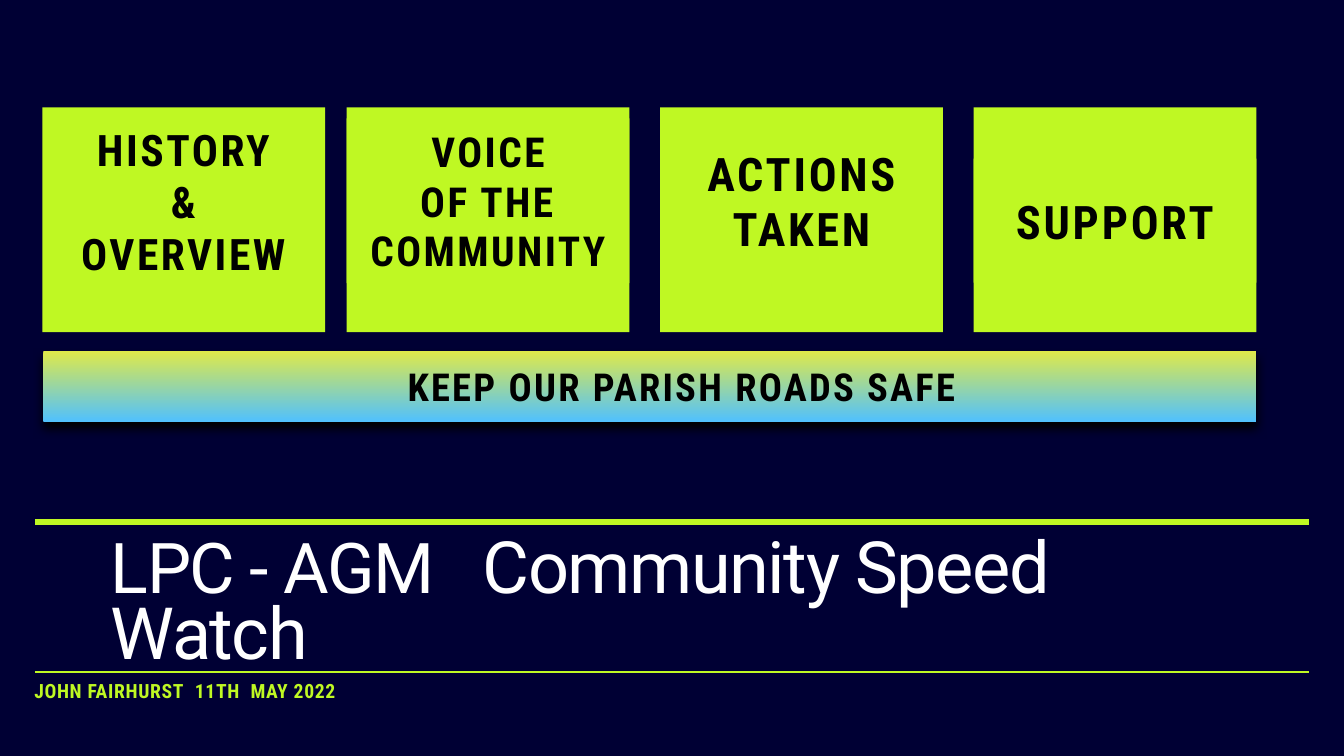
from typing import NamedTuple

from lxml import etree
from pptx import Presentation
from pptx import util as u
from pptx.dml import color
from pptx.enum import shapes, text
from pptx.oxml import ns

PX = 9144  # EMU per px, 100 px to the inch
NAVY, LIME, BLACK, WHITE = "000034", "BFF823", "000000", "FFFFFF"
CONDENSED, REGULAR = "Roboto Condensed", "Roboto"
CARD_TOP, CARD_WIDTH, CARD_HEIGHT = 213, 561, 446


class Box(NamedTuple):
    left: int
    top: int
    width: int
    height: int


class Style(NamedTuple):
    size: float
    tracking: float
    colour: str = BLACK
    font: str = CONDENSED
    bold: bool = True


class Card(NamedTuple):
    left: int
    label: Box
    lines: list[str]
    style: Style


CARDS = [
    Card(84, Box(90, 227, 548, 344), ["HISTORY", "&", "OVERVIEW"], Style(62, 3.7)),
    Card(688, Box(688, 235, 561, 327), ["VOICE", "OF THE COMMUNITY"], Style(59, 3.5)),
    Card(1310, Box(1315, 275, 551, 246), ["ACTIONS", "TAKEN"], Style(66, 4)),
    Card(1932, Box(1932, 315, 561, 246), ["SUPPORT"], Style(66, 4)),
]


def rgb(value: str) -> color.RGBColor:
    return color.RGBColor.from_string(value)


def emu(box: Box) -> list[int]:
    return [length * PX for length in box]


def style_run(run, style: Style) -> None:
    run.font.size = u.Pt(style.size)
    run.font.name = style.font
    run.font.bold = style.bold
    run.font.color.rgb = rgb(style.colour)
    run.font._element.set("spc", str(round(style.tracking * 100)))


def set_up_frame(frame, anchor=text.MSO_ANCHOR.MIDDLE) -> None:
    frame.word_wrap = True
    frame.auto_size = text.MSO_AUTO_SIZE.NONE
    frame.vertical_anchor = anchor
    frame.margin_left = frame.margin_right = 6 * PX
    frame.margin_top = frame.margin_bottom = 6 * PX


def write_lines(frame, lines: list[str], style: Style) -> None:
    set_up_frame(frame)
    frame.text = "\n".join(lines)
    for paragraph in frame.paragraphs:
        paragraph.alignment = text.PP_ALIGN.CENTER
        for run in paragraph.runs:
            style_run(run, style)


def write_runs(paragraph, pieces: list[tuple[str, Style]]) -> None:
    for words, style in pieces:
        run = paragraph.add_run()
        run.text = words
        style_run(run, style)


def add_panel(slide, box: Box):
    panel = slide.shapes.add_shape(shapes.MSO_SHAPE.RECTANGLE, *emu(box))
    panel.shadow.inherit = False
    panel.fill.solid()
    panel.fill.fore_color.rgb = rgb(LIME)
    panel.line.fill.background()
    return panel


def add_rule(slide, y: int, weight: float) -> None:
    rule = slide.shapes.add_connector(
        shapes.MSO_CONNECTOR.STRAIGHT, 69 * PX, y * PX, 2597 * PX, y * PX)
    rule.line.color.rgb = rgb(LIME)
    rule.line.width = u.Pt(weight)
    etree.SubElement(rule._element.spPr, ns.qn("a:effectLst"))


def add_card(slide, card: Card) -> None:
    add_panel(slide, Box(card.left, CARD_TOP, CARD_WIDTH, CARD_HEIGHT))
    label = add_panel(slide, card.label)
    write_lines(label.text_frame, card.lines, card.style)


def add_shadow(shape) -> None:
    """Cast a soft black shadow straight down."""
    effects = shape._element.spPr.find(ns.qn("a:effectLst"))
    shadow = etree.SubElement(
        effects, ns.qn("a:outerShdw"), blurRad=str(u.Pt(15)), dist=str(u.Pt(10)),
        dir="5400000", rotWithShape="0")
    etree.SubElement(shadow, ns.qn("a:srgbClr"), val=BLACK)


def add_slogan(slide) -> None:
    strip = add_panel(slide, Box(86, 697, 2406, 139))
    strip.fill.gradient()
    strip.fill.gradient_angle = 270
    for stop, shade in zip(strip.fill.gradient_stops, ["DFE94A", "51C1FD"]):
        stop.color.rgb = rgb(shade)
    add_shadow(strip)
    slogan = slide.shapes.add_textbox(*emu(Box(576, 712, 1554, 109)))
    write_lines(slogan.text_frame, ["KEEP OUR PARISH ROADS SAFE"], Style(55, 3.3))


def fill_title(title) -> None:
    title.left, title.top, title.width, title.height = emu(Box(214, 1056, 2193, 258))
    set_up_frame(title.text_frame)
    paragraph = title.text_frame.paragraphs[0]
    paragraph.alignment = text.PP_ALIGN.LEFT
    paragraph.line_spacing = 0.7
    write_runs(paragraph, [
        ("LPC - AGM", Style(100, -2, WHITE, REGULAR, False)),
        (" ", Style(150, 31, WHITE, REGULAR, False)),
        ("Community Speed Watch", Style(103, -2.1, WHITE, REGULAR, False)),
    ])


def add_byline(slide) -> None:
    byline = slide.shapes.add_textbox(*emu(Box(62, 1342, 2541, 61)))
    set_up_frame(byline.text_frame, text.MSO_ANCHOR.TOP)
    words, gap = Style(28, 1, LIME), Style(28, 8.5, LIME)
    write_runs(byline.text_frame.paragraphs[0], [
        ("JOHN FAIRHURST", words), (" ", gap), ("11TH", words), (" ", gap),
        ("MAY 2022", words),
    ])


def main() -> None:
    deck = Presentation()
    deck.slide_width, deck.slide_height = 2667 * PX, 1500 * PX
    slide = deck.slides.add_slide(deck.slide_layouts[5])
    slide.background.fill.solid()
    slide.background.fill.fore_color.rgb = rgb(NAVY)

    add_rule(slide, 1333, 3)
    add_rule(slide, 1036, 9)
    add_byline(slide)
    for card in CARDS:
        add_card(slide, card)
    add_slogan(slide)
    fill_title(slide.shapes.title)
    deck.save("out.pptx")


if __name__ == "__main__":
    main()
